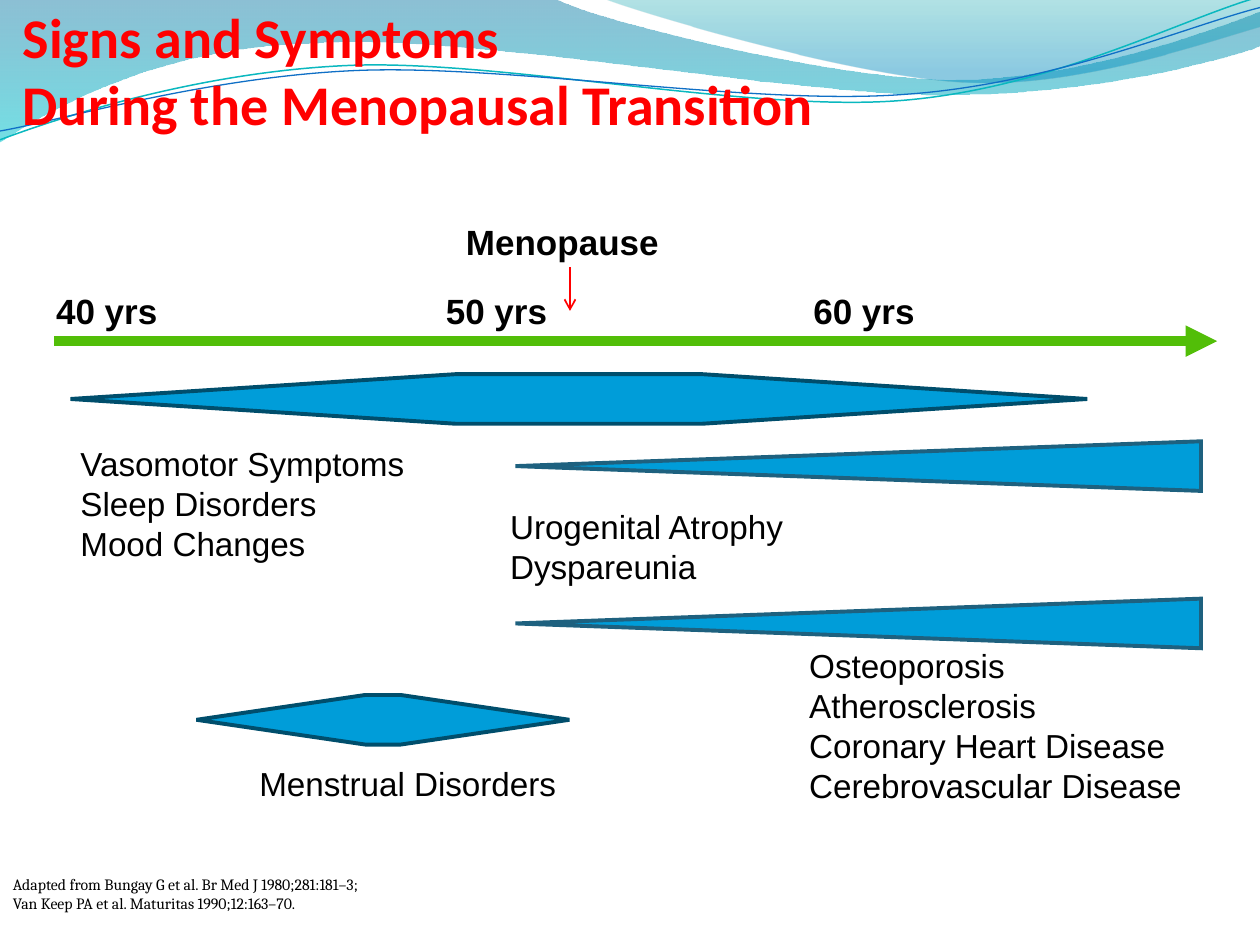
"""Build a timeline slide of signs and symptoms during the menopausal transition."""
from lxml.etree import SubElement
from pptx import Presentation
from pptx.dml.color import RGBColor
from pptx.enum.shapes import MSO_CONNECTOR as Link, MSO_SHAPE as Shape
from pptx.enum.text import MSO_ANCHOR as Anchor, MSO_AUTO_SIZE as Fit, PP_ALIGN as Align
from pptx.oxml.ns import qn
from pptx.util import Inches, Pt

WIDTH, HEIGHT = Inches(10), Inches(7.5)
COLORS = {
    "title": "FF0000", "text": "000000", "axis": "52BE08", "marker": "FF0000",
    "band": "009DD9", "span edge": "004E6C", "wedge edge": "1E617F",
    "deep blue": "0074A1", "cyan": "00C6CF", "teal": "00A1A9", "blue": "008BBF",
    "teal line": "0AB8BF", "blue line": "0F6FC6",
}
TITLE = "Signs and Symptoms\vDuring the Menopausal Transition"
SOURCE = "Adapted from Bungay G et al. Br Med J 1980;281:181–3;\vVan Keep PA et al. Maturitas\u00a01990;12:163–70."
TITLE_AREA = (1.8, 1, 98.2, 13.5)
SOURCE_AREA = (0.04, 91.9, 76.8, 7.3)

SYMPTOMS = [
    (["Vasomotor Symptoms", "Sleep Disorders", "Mood Changes"], (5.4, 46.25, 28, 14)),
    (["Urogenital Atrophy", "Dyspareunia"], (39.5, 52.9, 24, 9.9)),
    (["Osteoporosis", "Atherosclerosis", "Coronary Heart Disease", "Cerebrovascular Disease"],
     (63.24, 67.64, 31.8, 18.1)),
    (["Menstrual Disorders"], (19.6, 80.1, 25.7, 5.6)),
]
MARKS = [
    ("40 yrs", (3.47, 30, 10.3, 5.7)),
    ("50 yrs", (34.4, 30, 10.3, 5.7)),
    ("60 yrs", (63.57, 30, 10.3, 5.7)),
    ("Menopause", (36, 22.63, 17.3, 5.7)),
]
SPANS = [((5.6, 39.6, 80.7, 5.25), 7.76), ((15.6, 73.55, 29.6, 5.25), 3.4)]
WEDGES = [(40.92, 46.7, 54.4, 5.25), (40.92, 63.35, 54.4, 5.25)]
ARROWS = [
    ((4.3, 36.1), (96.6, 36.1), "axis", 6, "triangle"),
    ((45.24, 28.3), (45.24, 32.9), "marker", 1, "arrow"),
]
WAVES = [
    ([(0, 0), (4.4, -0.01), (4.76, 0.17, 6.64, 0.63, 7.58, 0.63),
      (8.53, 0.63, 9.58, 0.26, 10, 0.09), (10.01, 0.36),
      (9.83, 0.44, 8.7, 0.76, 7.46, 0.75), (6.22, 0.75, 3.82, 0.28, 2.57, 0.34),
      (1.29, 0.36, 0.46, 0.83, -0.01, 1.13), (0, 0)],
     [(0, "deep blue", 45), (1, "cyan", 55)]),
    ([(4.79, -0.01), (5.09, 0.11, 6.82, 0.62, 7.69, 0.65),
      (8.56, 0.69, 9.61, 0.32, 10, 0.21), (10, 0), (4.79, -0.01)],
     [(0, "teal", 30), (0.8, "blue", 45)]),
]
CURVES = [
    ([(0, 1.11), (0.48, 0.93, 1.58, 0.57, 2.77, 0.52), (3.95, 0.47, 5.93, 0.89, 7.13, 0.8),
      (8.33, 0.71, 9.38, 0.15, 9.98, -0.02)], "teal line", 0.85),
    ([(0, 1.04), (0.47, 0.96, 1.64, 0.61, 2.83, 0.56), (4.03, 0.51, 5.97, 0.84, 7.17, 0.75),
      (8.36, 0.67, 9.41, 0.21, 10, 0.06)], "blue line", 0.75),
]


def rgb(name):
    """Return the named colour."""
    return RGBColor.from_string(COLORS[name])


def place(area):
    """Turn percentages of the slide into lengths."""
    return [round(share * side / 100) for share, side in zip(area, (WIDTH, HEIGHT) * 2)]


def apply(target, values):
    """Set every attribute in a dict."""
    for name, value in values.items():
        setattr(target, name, value)


def outline(shape, color, width):
    """Give a shape or connector a solid line."""
    shape.line.color.rgb = rgb(color)
    shape.line.width = Pt(width)


def add_path(page, steps, close):
    """Draw a freeform of straight and Bezier steps."""
    points = [(Inches(x), Inches(y)) for step in steps for x, y in zip(step[::2], step[1::2])]
    builder = page.shapes.build_freeform(*points[0], scale=1.0)
    builder.add_line_segments(points[1:], close=close)
    shape = builder.convert_to_shape()
    shape.shadow.inherit = False
    segments = iter(list(shape._element.spPr.iter(qn("a:lnTo"))))
    for step in steps[1:]:
        first = next(segments)
        if len(step) == 6:
            first.tag = qn("a:cubicBezTo")
            for control in (next(segments), next(segments)):
                first.append(control[0])
                control.getparent().remove(control)
    return shape


def add_wave(page, steps, stops):
    """Draw a translucent wave shaded from top to bottom."""
    shape = add_path(page, steps, True)
    shape.line.fill.background()
    shape.fill.gradient()
    shape.fill.gradient_angle = 270
    for stop, (position, color, _) in zip(shape.fill.gradient_stops, stops):
        stop.position = position
        stop.color.rgb = rgb(color)
    colors = list(shape._element.spPr.iter(qn("a:srgbClr")))
    for node, (_, _, opacity) in zip(colors, stops):
        SubElement(node, qn("a:alpha"), val=str(opacity * 1000))


def add_curve(page, steps, color, width):
    """Draw a thin open curve."""
    shape = add_path(page, steps, False)
    shape.fill.background()
    outline(shape, color, width)


def write(box, lines, font, frame=None):
    """Fill a box with left-aligned paragraphs."""
    apply(box.text_frame, frame or {"word_wrap": False, "auto_size": Fit.SHAPE_TO_FIT_TEXT})
    box.text_frame.text = "\n".join(lines)
    for para in box.text_frame.paragraphs:
        para.alignment = Align.LEFT
        for span in para.runs:
            apply(span.font, font)
            span.font.color.rgb = rgb("title" if box.is_placeholder else "text")


def add_band(page, kind, area, edge):
    """Draw a filled symptom band with sharp corners."""
    shape = page.shapes.add_shape(kind, *area)
    shape.shadow.inherit = False
    shape.fill.solid()
    shape.fill.fore_color.rgb = rgb("band")
    outline(shape, edge, 2.25)
    SubElement(shape.line._get_or_add_ln(), qn("a:miter"), lim="800000")
    return shape


def add_wedge(page, area):
    """Draw a triangle that widens to the right."""
    left, top, width, height = place(area)
    shift = (width - height) // 2
    shape = add_band(page, Shape.ISOSCELES_TRIANGLE, (left + shift, top - shift, height, width), "wedge edge")
    shape.rotation = 270


def add_arrow(page, start, end, color, width, head):
    """Draw a straight arrow."""
    arrow = page.shapes.add_connector(Link.STRAIGHT, *place(start), *place(end))
    outline(arrow, color, width)
    SubElement(arrow.line._get_or_add_ln(), qn("a:tailEnd"), type=head)
    SubElement(arrow._element.spPr, qn("a:effectLst"))


def main():
    """Assemble and save the deck."""
    deck = Presentation()
    apply(deck, {"slide_width": WIDTH, "slide_height": HEIGHT})
    page = deck.slides.add_slide(deck.slide_layouts[5])
    for wave in WAVES:
        add_wave(page, *wave)
    for curve in CURVES:
        add_curve(page, *curve)

    title = page.shapes.title
    page.shapes._spTree.append(title._element)
    apply(title, dict(zip(("left", "top", "width", "height"), place(TITLE_AREA))))
    write(title, [TITLE], {"name": "Calibri", "size": Pt(32), "bold": True},
          {"word_wrap": True, "auto_size": Fit.NONE, "vertical_anchor": Anchor.BOTTOM,
           "margin_left": 0, "margin_right": 0, "margin_top": Inches(0.05), "margin_bottom": 0})
    write(page.shapes.add_textbox(*place(SOURCE_AREA)), [SOURCE],
          {"name": "Cambria", "size": Pt(9)}, {"word_wrap": True})

    for area, slope in SPANS:
        hexagon = add_band(page, Shape.HEXAGON, place(area), "span edge")
        hexagon.adjustments[0] = slope
    for area in WEDGES:
        add_wedge(page, area)
    for arrow in ARROWS:
        add_arrow(page, *arrow)
    for lines, area in SYMPTOMS:
        write(page.shapes.add_textbox(*place(area)), lines, {"name": "Arial", "size": Pt(19)})
    for label, area in MARKS:
        write(page.shapes.add_textbox(*place(area)), [label],
              {"name": "Arial", "size": Pt(20), "bold": True})
    deck.save("out.pptx")


if __name__ == "__main__":
    main()
